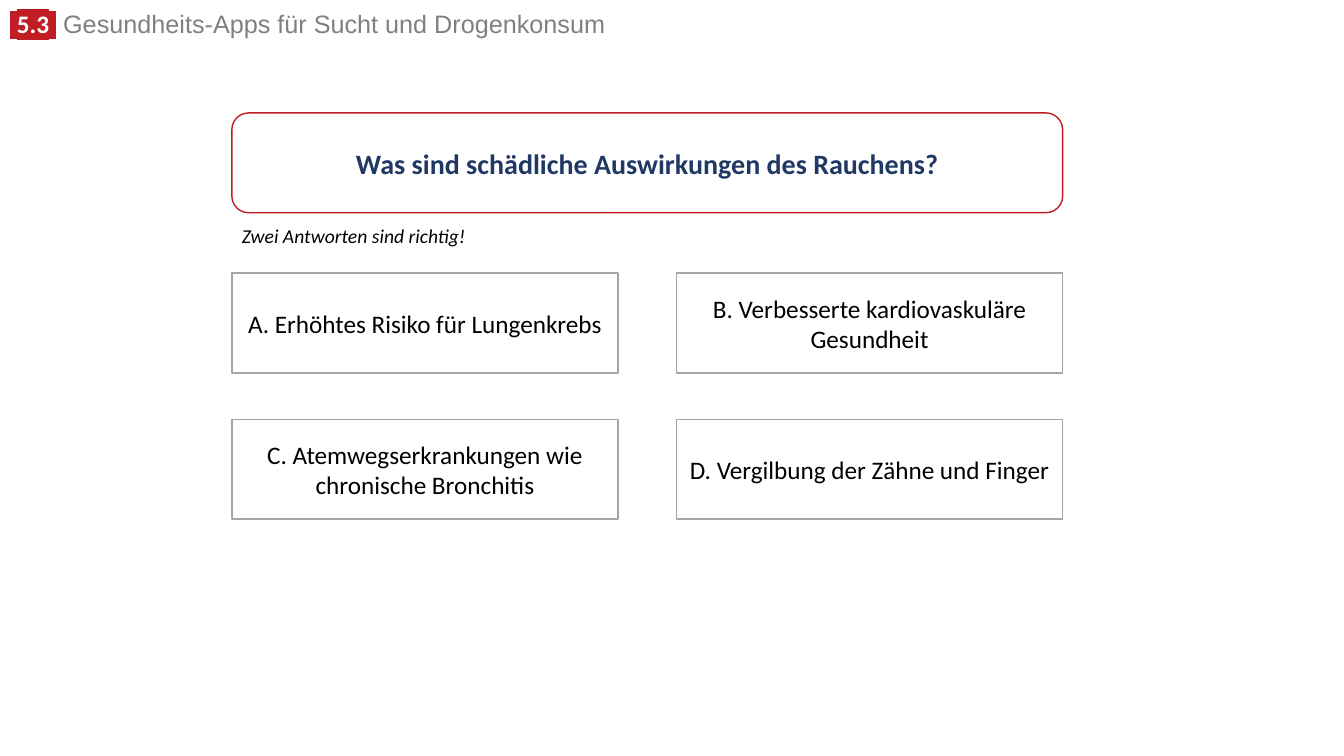
from lxml.etree import SubElement
from pptx import Presentation
from pptx.dml.color import RGBColor
from pptx.enum.shapes import MSO_SHAPE
from pptx.enum.text import MSO_ANCHOR, MSO_AUTO_SIZE, PP_ALIGN
from pptx.oxml.ns import qn
from pptx.util import Inches, Pt

RED = RGBColor(0xC0, 0x1E, 0x24)
NAVY = RGBColor(0x20, 0x38, 0x64)
GREY = RGBColor(0x80, 0x80, 0x80)
EDGE = RGBColor(0xA5, 0xA5, 0xA5)
WHITE = RGBColor(0xFF, 0xFF, 0xFF)
BLACK = RGBColor(0, 0, 0)

# Grid of the quiz
LEFT, TOP = 2.3, 2.71
COL, ROW = 4.41, 1.45
WIDE, HIGH = 3.83, 0.99


def add_run(para, text, size, color, face="Calibri", bold=False, mark=None):
    run = para.add_run()
    run.text = text
    font = run.font
    font.size, font.bold = Pt(size), bold
    font.color.rgb = color
    if mark is not None:
        glow = SubElement(run._r.rPr, qn("a:highlight"))
        SubElement(glow, qn("a:srgbClr"), val=str(mark))
    font.name = face
    return run


def add_card(kind, x, y, width, edge, text, size, color, bold=False):
    card = slide.shapes.add_shape(
        kind, Inches(x), Inches(y), Inches(width), Inches(HIGH))
    card.shadow.inherit = False
    card.fill.solid()
    card.fill.fore_color.rgb = WHITE
    card.line.color.rgb = edge
    card.line.width = Pt(1)
    frame = card.text_frame
    frame.word_wrap = True
    frame.vertical_anchor = MSO_ANCHOR.MIDDLE
    para = frame.paragraphs[0]
    para.alignment = PP_ALIGN.CENTER
    add_run(para, text, size, color, bold=bold)


deck = Presentation()
deck.slide_width, deck.slide_height = Inches(13.33), Inches(7.5)
slide = deck.slides.add_slide(deck.slide_layouts[6])

# Chapter header
head = slide.shapes.add_textbox(0, Inches(0.09), Inches(9.52), Inches(0.35))
head.text_frame.word_wrap = True
head.text_frame.auto_size = MSO_AUTO_SIZE.SHAPE_TO_FIT_TEXT
para = head.text_frame.paragraphs[0]
para.line_spacing = 0.8
for text, face in ((" ", "Arial"), ("5.3", "Calibri"), (" ", "Arial")):
    add_run(para, text, 18, WHITE, face, True, RED)
add_run(para, " Gesundheits-Apps für Sucht und Drogenkonsum", 18, GREY, "Arial")

# Question
add_card(MSO_SHAPE.ROUNDED_RECTANGLE, LEFT, 1.12, COL + WIDE, RED,
         "Was sind schädliche Auswirkungen des Rauchens?", 20, NAVY, True)

# Hint
hint = slide.shapes.add_textbox(
    Inches(LEFT), Inches(2.17), Inches(2.44), Inches(0.34))
hint.text_frame.word_wrap = False
hint.text_frame.auto_size = MSO_AUTO_SIZE.SHAPE_TO_FIT_TEXT
note = add_run(hint.text_frame.paragraphs[0],
               "Zwei Antworten sind richtig!", 14, BLACK)
note.font.italic = True

# Answers, two by two
answers = (
    "A. Erhöhtes Risiko für Lungenkrebs",
    "B. Verbesserte kardiovaskuläre Gesundheit",
    "C. Atemwegserkrankungen wie chronische Bronchitis",
    "D. Vergilbung der Zähne und Finger",
)
for i, text in enumerate(answers):
    row, col = divmod(i, 2)
    add_card(MSO_SHAPE.RECTANGLE, LEFT + col * COL, TOP + row * ROW, WIDE,
             EDGE, text, 18, BLACK)

deck.save("out.pptx")
